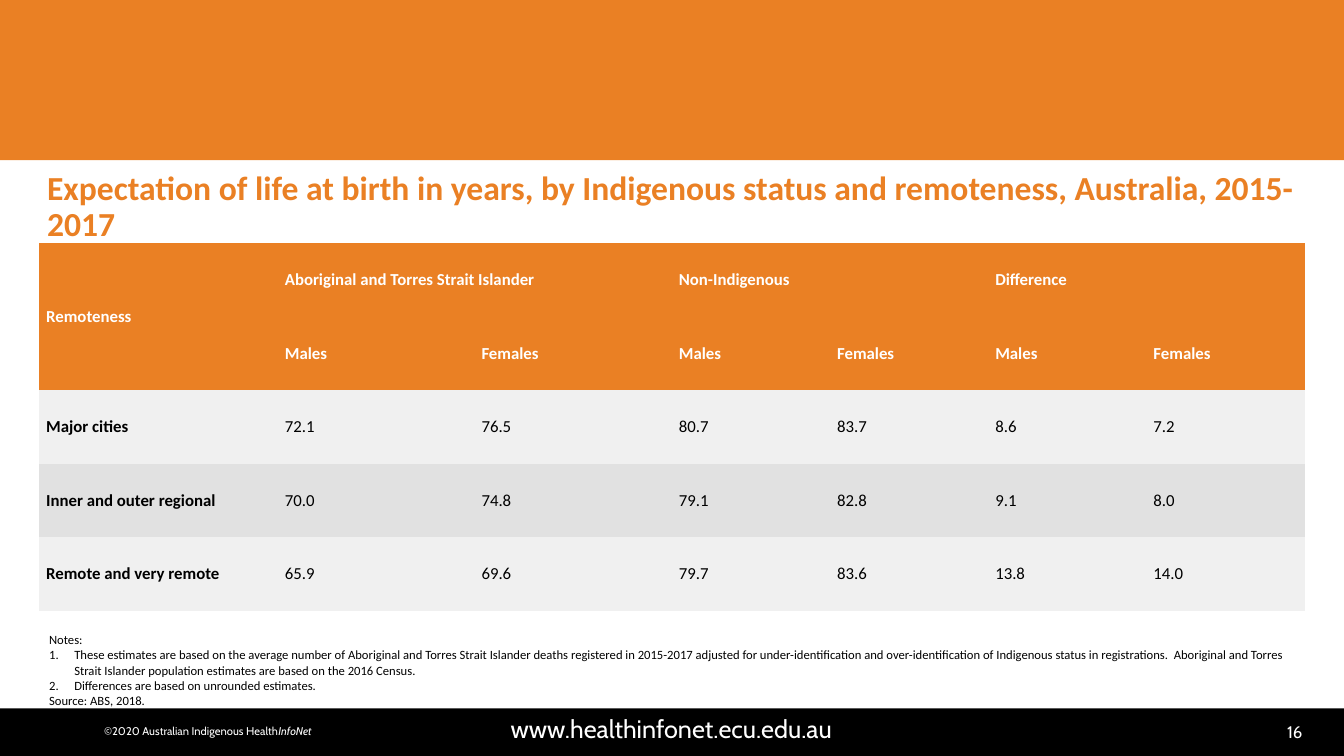
from pptx import Presentation
from pptx.dml.color import RGBColor
from pptx.enum.shapes import MSO_SHAPE
from pptx.enum.text import MSO_ANCHOR, PP_ALIGN
from pptx.util import Pt
from lxml.etree import SubElement
from pptx.oxml.ns import qn

ORANGE = RGBColor(0xEA, 0x80, 0x24)
BLACK = RGBColor(0, 0, 0)
WHITE = RGBColor(255, 255, 255)
LIGHT = RGBColor(0xF0, 0xF0, 0xF0)
GREY = RGBColor(0xE1, 0xE1, 0xE1)
PLAIN = "{2D5ABB26-0587-4C30-8999-92F81FD0307C}"

GROUPS = ["Aboriginal and Torres Strait Islander", "Non-Indigenous", "Difference"]
ROWS = [
    ["Remoteness"] + [text for group in GROUPS for text in (group, "")],
    [""] + ["Males", "Females"] * 3,
    ["Major cities", "72.1", "76.5", "80.7", "83.7", "8.6", "7.2"],
    ["Inner and outer regional", "70.0", "74.8", "79.1", "82.8", "9.1", "8.0"],
    ["Remote and very remote", "65.9", "69.6", "79.7", "83.6", "13.8", "14.0"],
]
FILLS = [ORANGE, ORANGE, LIGHT, GREY, LIGHT]
WIDTHS = [170.5, 140.5, 141, 113, 113, 113, 113]
NOTES = [
    ("Notes:", False),
    ("These estimates are based on the average number of Aboriginal and Torres Strait "
     "Islander deaths registered in 2015-2017 adjusted for under-identification and "
     "over-identification of Indigenous status in registrations.  Aboriginal and Torres "
     "Strait Islander population estimates are based on the 2016 Census.", True),
    ("Differences are based on unrounded estimates.", True),
    ("Source: ABS, 2018.", False),
]


class Page:
    """Hold the slide and its text style, and draw each kind of element."""

    def __init__(self, slide, body, foot):
        self.slide = slide
        self.body = body
        self.foot = foot

    def run(self, para, text, size, color, face, bold=False, slant=False):
        run = para.add_run()
        run.text = text
        font = run.font
        font.name, font.size = face, Pt(size)
        font.bold, font.italic = bold, slant
        font.color.rgb = color

    def band(self, left, top, width, height, color):
        band = self.slide.shapes.add_shape(
            MSO_SHAPE.RECTANGLE, Pt(left), Pt(top), Pt(width), Pt(height))
        band.shadow.inherit = False
        band.fill.solid()
        band.fill.fore_color.rgb = color
        band.line.fill.background()

    def box(self, left, top, width, height, wrap=True, anchor=MSO_ANCHOR.TOP):
        box = self.slide.shapes.add_textbox(Pt(left), Pt(top), Pt(width), Pt(height))
        frame = box.text_frame
        frame.word_wrap = wrap
        frame.vertical_anchor = anchor
        return frame

    def title(self, text):
        para = self.box(26.5, 119, 907, 60.5).paragraphs[0]
        para.line_spacing = 0.9
        self.run(para, text, 24, ORANGE, self.body, bold=True)

    def footer(self, spot, parts, size, align, wrap=True):
        para = self.box(*spot, wrap, MSO_ANCHOR.MIDDLE).paragraphs[0]
        para.alignment = align
        for text, slant in parts:
            self.run(para, text, size, WHITE, self.foot, slant=slant)

    def table(self, left, top, height, rows, widths, fills):
        frame = self.slide.shapes.add_table(
            len(rows), len(widths), Pt(left), Pt(top), Pt(sum(widths)), Pt(height))
        table = frame.table
        table._tbl.tblPr.find(qn("a:tableStyleId")).text = PLAIN
        for col, width in zip(table.columns, widths):
            col.width = Pt(width)
        for y, (row, fill) in enumerate(zip(rows, fills)):
            table.rows[y].height = Pt(height / len(rows))
            for x, text in enumerate(row):
                self.cell(table.cell(y, x), text, fill, y < 2 or x == 0)
        table.cell(0, 0).merge(table.cell(1, 0))
        for x in range(1, len(widths), 2):
            table.cell(0, x).merge(table.cell(0, x + 1))

    def cell(self, cell, text, fill, bold):
        cell.fill.solid()
        cell.fill.fore_color.rgb = fill
        cell.vertical_anchor = MSO_ANCHOR.MIDDLE
        cell.margin_left = cell.margin_right = Pt(5)
        cell.margin_top = cell.margin_bottom = 0
        if text:
            para = cell.text_frame.paragraphs[0]
            para.space_after = Pt(5)
            color = WHITE if fill == ORANGE else BLACK
            self.run(para, text, 12, color, self.body, bold)

    def notes(self, notes):
        frame = self.box(28, 448, 904, 60)
        for i, (text, listed) in enumerate(notes):
            para = frame.add_paragraph() if i else frame.paragraphs[0]
            if listed:
                props = para._p.get_or_add_pPr()
                props.set("marL", str(Pt(18)))
                props.set("indent", str(-Pt(18)))
                SubElement(props, qn("a:buFont"), typeface="+mj-lt")
                SubElement(props, qn("a:buAutoNum"), type="arabicPeriod")
            self.run(para, text, 9, BLACK, self.body)


def main():
    deck = Presentation()
    deck.slide_width, deck.slide_height = Pt(960), Pt(540)
    page = Page(deck.slides.add_slide(deck.slide_layouts[6]), "Calibri", "Cabin")
    page.band(0, 0, 960, 114.5, ORANGE)
    page.band(0, 506, 960, 34, BLACK)
    page.footer((860.5, 512, 77, 21.5), [("16", False)], 12, PP_ALIGN.RIGHT)
    page.footer((44.5, 506, 870, 28), [("www.healthinfonet.ecu.edu.au", False)],
                18, PP_ALIGN.CENTER)
    page.footer((66, 514, 165, 17),
                [("©2020 Australian Indigenous Health", False), ("InfoNet", True)],
                8, PP_ALIGN.CENTER, wrap=False)
    page.title("Expectation of life at birth in years, by Indigenous status and "
               "remoteness, Australia, 2015-2017")
    page.table(28, 173.5, 263, ROWS, WIDTHS, FILLS)
    page.notes(NOTES)
    deck.save("out.pptx")


if __name__ == "__main__":
    main()
